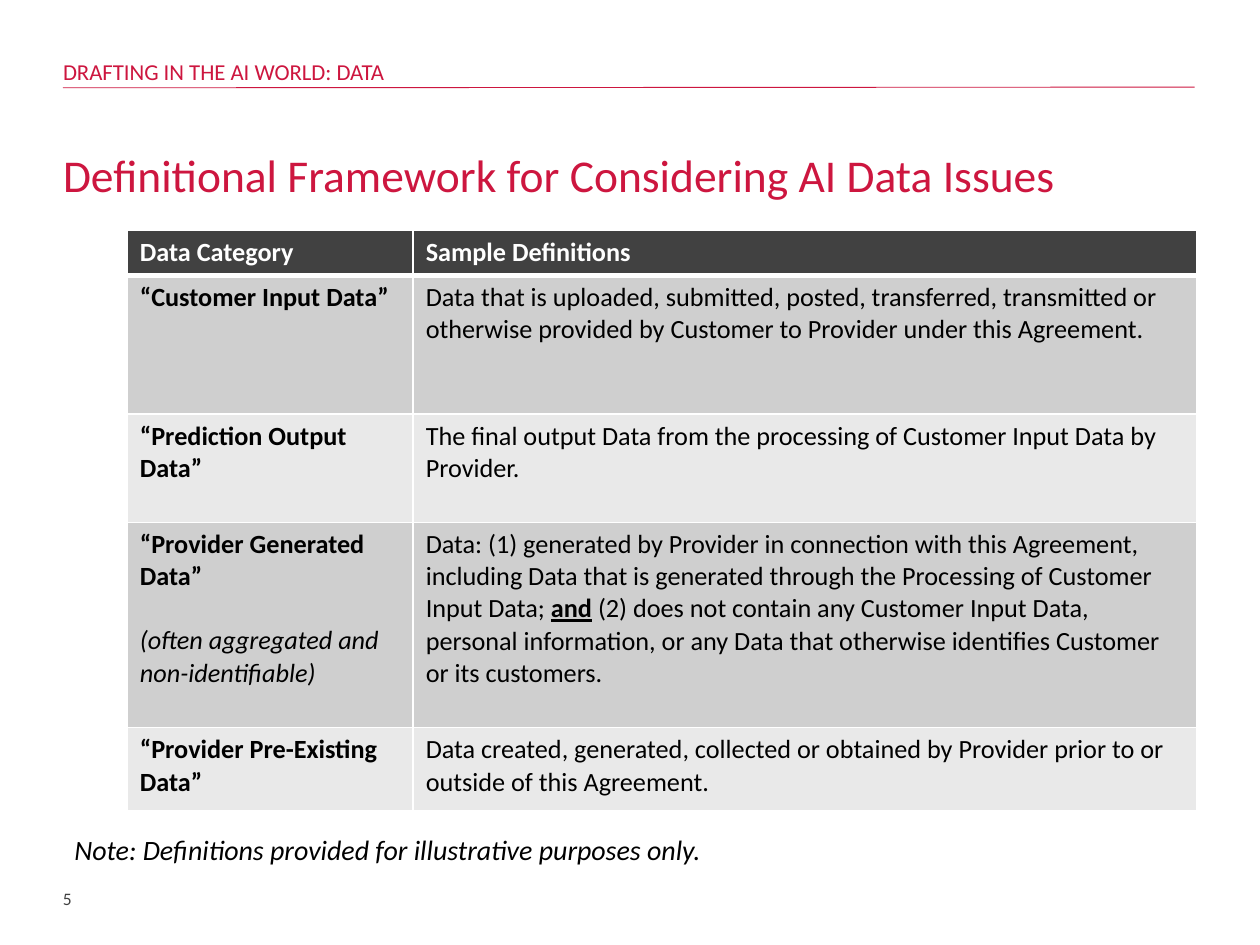
from lxml.etree import SubElement
from pptx import Presentation
from pptx.dml.color import RGBColor
from pptx.enum.text import MSO_ANCHOR, MSO_AUTO_SIZE
from pptx.oxml.ns import qn
from pptx.util import Pt

RED, DARK, WHITE, BLACK = "CD163F", "414141", "FFFFFF", "000000"
BANDS = ["CFCFCF", "E9E9E9"]
SECTION = "DRAFTING IN THE AI WORLD: DATA"
TITLE = "Definitional Framework for Considering AI Data Issues"
NOTE = "Note: Definitions provided for illustrative purposes only."
PAGE = "5"
HEADER = ["Data Category", "Sample Definitions"]
# category, qualifier below it, runs of the definition (text, emphasised)
DEFINITIONS = [
    ("“Customer Input Data”", "",
     [("Data that is uploaded, submitted, posted, transferred, transmitted or "
       "otherwise provided by Customer to Provider under this Agreement.", False)]),
    ("“Prediction Output Data”", "",
     [("The final output Data from the processing of Customer Input Data by Provider.", False)]),
    ("“Provider Generated Data”", "(often aggregated and non-identifiable)",
     [("Data: (1) generated by Provider in connection with this Agreement, including Data "
       "that is generated through the Processing of Customer Input Data; ", False),
      ("and", True),
      (" (2) does not contain any Customer Input Data, personal information, or any Data "
       "that otherwise identifies Customer or its customers.", False)]),
    ("“Provider Pre-Existing Data”", "",
     [("Data created, generated, collected or obtained by Provider prior to or outside "
       "of this Agreement.", False)]),
]
COL_WIDTHS = [163.4, 447.8]
ROW_HEIGHTS = [25.2, 79.2, 61.9, 117.3, 47.3]


def rgb(color):
    return RGBColor.from_string(color)


def add_run(p, text, color, **fmt):
    r = p.add_run()
    r.text = text
    r.font.color.rgb = rgb(color)
    for name, value in {"name": "Calibri", **fmt}.items():
        setattr(r.font, name, value)


def fill_box(sp, box, text, color, inset=0, anchor=MSO_ANCHOR.TOP, **fmt):
    """Place a text shape and write one unbulleted line in it."""
    sp.left, sp.top, sp.width, sp.height = map(Pt, box)
    tf = sp.text_frame
    for name, value in {"word_wrap": True, "auto_size": MSO_AUTO_SIZE.NONE,
                        "vertical_anchor": anchor}.items():
        setattr(tf, name, value)
    for side in ("left", "top", "right", "bottom"):
        setattr(tf, f"margin_{side}", Pt(inset if side in ("top", "bottom") else inset * 2))
    p = tf.paragraphs[0]
    pPr = p._p.get_or_add_pPr()
    pPr.set("marL", "0")
    pPr.set("indent", "0")
    pPr.set("algn", "l")
    SubElement(pPr, qn("a:buNone"))
    p.space_before = Pt(0)
    add_run(p, text, color, **fmt)


def style_cell(cell, fill, bottom=1):
    """Draw white cell borders, then the fill, in schema order."""
    tcPr = cell._tc.get_or_add_tcPr()
    for side, width in {"L": 1, "R": 1, "T": 1, "B": bottom}.items():
        ln = SubElement(tcPr, qn(f"a:ln{side}"), w=str(Pt(width)))
        SubElement(SubElement(ln, qn("a:solidFill")), qn("a:srgbClr"), val=WHITE)
    cell.fill.solid()
    cell.fill.fore_color.rgb = rgb(fill)


prs = Presentation()
prs.slide_width, prs.slide_height = Pt(720), Pt(540)
s = prs.slides.add_slide(prs.slide_layouts[3])
title, section, note = list(s.placeholders)[:3]

rule = s.shapes.add_connector(1, Pt(36), Pt(50.2), Pt(682.6), Pt(49.8))
rule.line.color.rgb = rgb(RED)
rule.line.width = Pt(0.5)
SubElement(rule._element.spPr, qn("a:effectLst"))

fill_box(section, (36, 33.2, 648, 17.3), SECTION, RED, size=Pt(13))
fill_box(title, (36, 78.5, 648.7, 42.5), TITLE, RED, anchor=MSO_ANCHOR.MIDDLE, size=Pt(26))
fill_box(note, (35.3, 472, 377.3, 28), NOTE, BLACK, inset=3.6, size=Pt(16), italic=True)
fill_box(s.shapes.add_textbox(0, 0, 0, 0), (36, 499, 167.8, 28.8), PAGE, DARK,
         anchor=MSO_ANCHOR.MIDDLE, size=Pt(10))

table = s.shapes.add_table(len(ROW_HEIGHTS), len(COL_WIDTHS), Pt(72.7), Pt(131.8),
                           Pt(sum(COL_WIDTHS)), Pt(sum(ROW_HEIGHTS))).table
for col, width in zip(table.columns, COL_WIDTHS):
    col.width = Pt(width)
for row, height in zip(table.rows, ROW_HEIGHTS):
    row.height = Pt(height)

for cell, text in zip(table.rows[0].cells, HEADER):
    style_cell(cell, DARK, bottom=3)
    add_run(cell.text_frame.paragraphs[0], text, WHITE, size=Pt(15), bold=True)

for i, (category, qualifier, definition) in enumerate(DEFINITIONS):
    left, right = table.rows[i + 1].cells
    for cell in (left, right):
        style_cell(cell, BANDS[i % 2])
    add_run(left.text_frame.paragraphs[0], category, BLACK, size=Pt(15), bold=True)
    if qualifier:
        p = left.text_frame.add_paragraph()
        p.space_before = Pt(18.3)
        add_run(p, qualifier, BLACK, size=Pt(15), bold=False, italic=True)
    for text, strong in definition:
        add_run(right.text_frame.paragraphs[0], text, BLACK, size=Pt(15),
                bold=strong, underline=strong)

prs.save("out.pptx")
